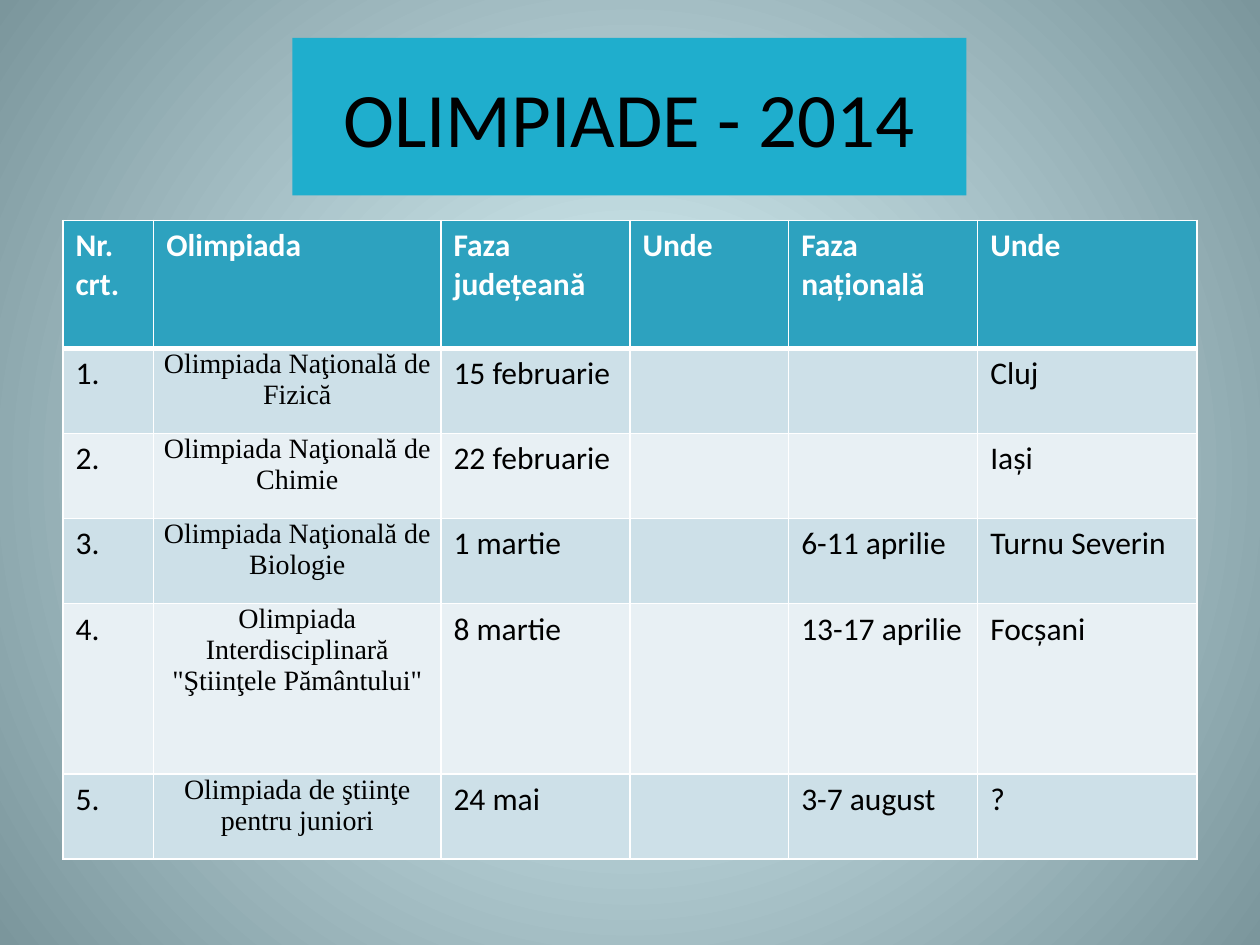
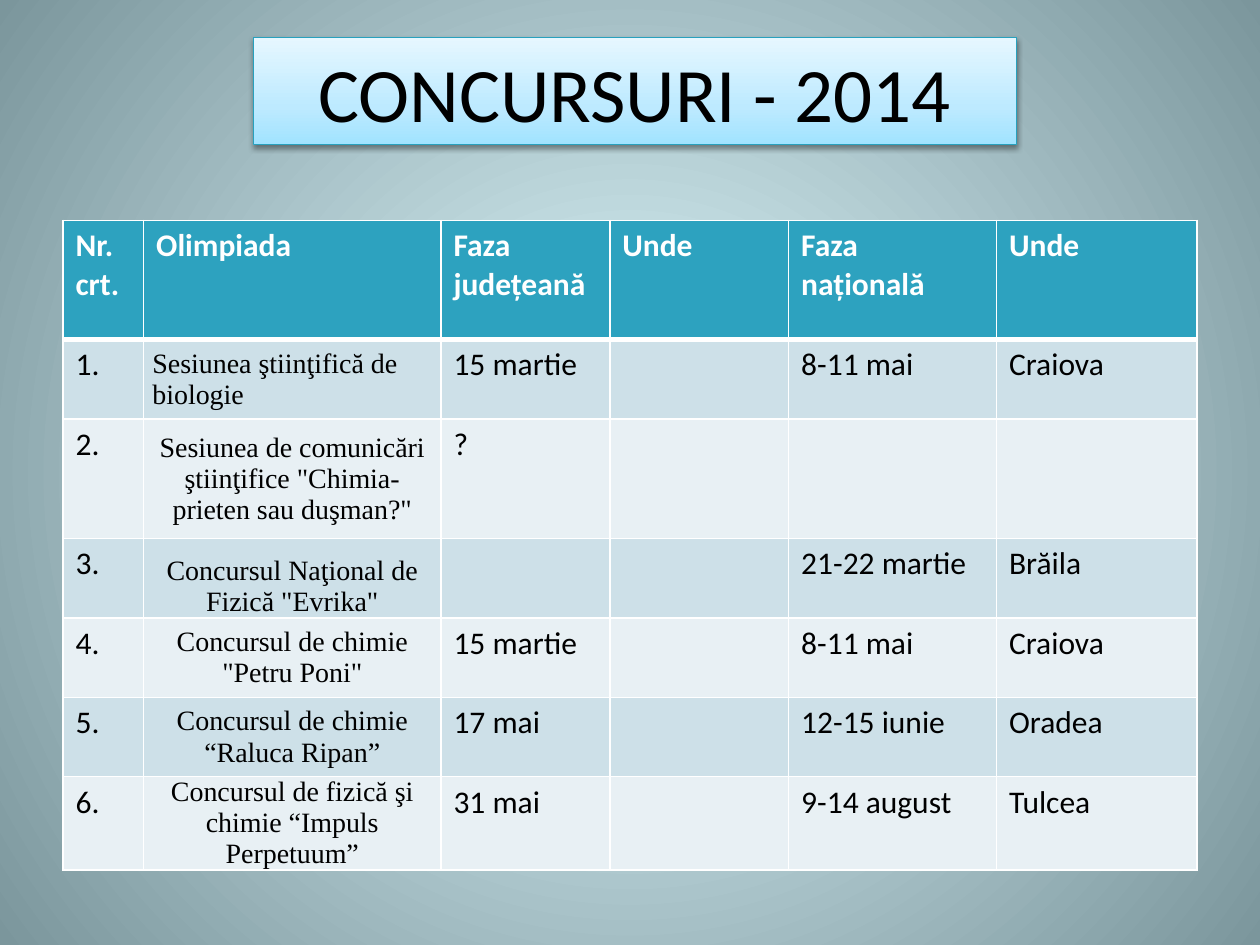
from lxml.etree import SubElement
from pptx import Presentation
from pptx.dml.color import RGBColor
from pptx.enum.shapes import MSO_SHAPE
from pptx.enum.text import MSO_ANCHOR, PP_ALIGN
from pptx.oxml.ns import qn
from pptx.util import Emu, Inches, Pt

W, H = Inches(10), Inches(7.5)
BLACK, WHITE = "000000", "FFFFFF"
HEADER_FILL, BANDS = "2DA2BF", ("CDE0E8", "E8F0F4")
BACKDROP = ((0, "E1FAFF"), (100, "7B969C"))
SANS, SERIF = "Calibri", "Times New Roman"
TABLE_LEFT, TABLE_TOP, TABLE_WIDTH = 0.05, 0.2333, 0.9
HEADINGS = ("Nr. crt.", "Olimpiada", "Faza județeană", "Unde", "Faza națională", "Unde")
NAME_COLUMN = 1
LEFT, CENTER = PP_ALIGN.LEFT, PP_ALIGN.CENTER
TOP, MIDDLE, BOTTOM = MSO_ANCHOR.TOP, MSO_ANCHOR.MIDDLE, MSO_ANCHOR.BOTTOM

# Each row: name, county date, national date, national place
OLYMPIADS = (
    ("Olimpiada Naţională de Fizică", "15 februarie", "", "Cluj"),
    ("Olimpiada Naţională de Chimie", "22 februarie", "", "Iași"),
    ("Olimpiada Naţională de Biologie", "1 martie", "6-11 aprilie", "Turnu Severin"),
    ('Olimpiada Interdisciplinară "Ştiinţele Pământului"', "8 martie", "13-17 aprilie", "Focșani"),
    ("Olimpiada de ştiinţe pentru juniori", "24 mai", "3-7 august", "?"),
)
CONTESTS = (
    ("Sesiunea ştiinţifică de biologie", "15 martie", "8-11 mai", "Craiova"),
    ('Sesiunea de comunicări ştiinţifice "Chimia-prieten sau duşman?"', "?", "", ""),
    ('Concursul Naţional de Fizică "Evrika"', "", "21-22 martie", "Brăila"),
    ('Concursul de chimie "Petru Poni"', "15 martie", "8-11 mai", "Craiova"),
    ("Concursul de chimie “Raluca Ripan”", "17 mai", "12-15 iunie", "Oradea"),
    ("Concursul de fizică şi chimie “Impuls Perpetuum”", "31 mai", "9-14 august", "Tulcea"),
)


def rgb(color):
    return RGBColor.from_string(color)


def write(tf, text, font=SANS, size=18, color=BLACK, bold=False, align=LEFT):
    tf.word_wrap = True
    p = tf.paragraphs[0]
    p.alignment = align
    r = p.add_run()
    r.text = text
    r.font.name, r.font.size, r.font.bold = font, Pt(size), bold
    r.font.color.rgb = rgb(color)


def add_color(parent, color):
    return SubElement(parent, qn("a:srgbClr"), val=color)


def set_gradient(fill, element, stops, angle=None):
    """Linear when an angle is given, otherwise circular from the centre."""
    fill.gradient()
    grad = next(element.iter(qn("a:gradFill")))
    for child in list(grad):
        grad.remove(child)
    stop_list = SubElement(grad, qn("a:gsLst"))
    for position, color in stops:
        add_color(SubElement(stop_list, qn("a:gs"), pos=str(position * 1000)), color)
    if angle is None:
        circle = SubElement(grad, qn("a:path"), path="circle")
        SubElement(circle, qn("a:fillToRect"), l="50000", t="50000", r="50000", b="50000")
    else:
        SubElement(grad, qn("a:lin"), ang=str(angle * 60000), scaled="1")


def set_borders(cell, top=1, bottom=1):
    tcPr = cell._tc.get_or_add_tcPr()
    for side, width in (("L", 1), ("R", 1), ("T", top), ("B", bottom)):
        ln = SubElement(tcPr, qn(f"a:ln{side}"), w=str(Pt(width)))
        add_color(SubElement(ln, qn("a:solidFill")), WHITE)


def add_slide(prs):
    s = prs.slides.add_slide(prs.slide_layouts[6])
    set_gradient(s.background.fill, s._element, BACKDROP)
    return s


def add_title(s, text, left, width, height):
    sp = s.shapes.add_shape(MSO_SHAPE.RECTANGLE, Emu(int(W * left)), Emu(int(H * 0.04)),
                            Emu(int(W * width)), Emu(int(H * height)))
    sp.shadow.inherit = False
    sp.line.fill.background()
    sp.text_frame.vertical_anchor = MIDDLE
    write(sp.text_frame, text, size=44, align=CENTER)
    return sp


def make_glossy(sp):
    """Pale blue gradient, thin outline and a soft shadow below."""
    set_gradient(sp.fill, sp._element, ((0, "A1E3FF"), (35, "BDEAFF"), (100, "E6F7FF")), angle=270)
    sp.line.color.rgb = rgb("28A1BE")
    sp.line.width = Pt(0.75)
    effects = sp._element.spPr.find(qn("a:effectLst"))
    shadow = SubElement(effects, qn("a:outerShdw"), blurRad=str(Pt(3.1)), dist=str(Pt(1.6)),
                        dir=str(90 * 60000), rotWithShape="0")
    SubElement(add_color(shadow, BLACK), qn("a:alpha"), val="38000")


def fill_cell(cell, text, row, column, name_align, name_anchor):
    header = row == 0
    set_borders(cell, top=3 if row == 1 else 1, bottom=3 if header else 1)
    cell.fill.solid()
    cell.fill.fore_color.rgb = rgb(HEADER_FILL if header else BANDS[(row - 1) % 2])
    style = {}
    if header:
        style = dict(color=WHITE, bold=True)
    elif column == NAME_COLUMN:
        style = dict(font=SERIF, size=16, align=name_align)
        cell.margin_left = cell.margin_right = Inches(0.07)
        cell.margin_top = cell.margin_bottom = 0
        cell.vertical_anchor = name_anchor
    if text:
        write(cell.text_frame, text, **style)


def add_schedule(s, entries, columns, rows, height, aligns=None, anchors=None):
    """columns and rows are relative weights; aligns and anchors style names by row."""
    aligns, anchors = aligns or {}, anchors or {}
    width, height = W * TABLE_WIDTH, H * height
    table = s.shapes.add_table(len(rows), len(columns), Emu(int(W * TABLE_LEFT)),
                               Emu(int(H * TABLE_TOP)), Emu(int(width)), Emu(int(height))).table
    for column, weight in zip(table.columns, columns):
        column.width = Emu(int(width * weight / sum(columns)))
    for row, weight in zip(table.rows, rows):
        row.height = Emu(int(height * weight / sum(rows)))
    lines = [HEADINGS]
    for number, (name, county, national, place) in enumerate(entries, 1):
        lines.append((f"{number}.", name, county, "", national, place))
    for i, line in enumerate(lines):
        for j, text in enumerate(line):
            fill_cell(table.cell(i, j), text, i, j, aligns.get(i, CENTER), anchors.get(i, TOP))


def olympiads_slide(prs):
    s = add_slide(prs)
    sp = add_title(s, "OLIMPIADE - 2014", left=0.232, width=0.535, height=0.1667)
    sp.fill.solid()
    sp.fill.fore_color.rgb = rgb("1FAECD")
    add_schedule(s, OLYMPIADS, columns=(0.72, 2.28, 1.5, 1.26, 1.5, 1.74),
                 rows=(1.5, 1, 1, 1, 2, 1), height=0.676)


def contests_slide(prs):
    s = add_slide(prs)
    make_glossy(add_title(s, "CONCURSURI - 2014", left=0.201, width=0.606, height=0.1133))
    anchors = {row: MIDDLE for row in range(1, len(CONTESTS) + 1)}
    anchors[3] = BOTTOM
    add_schedule(s, CONTESTS, columns=(0.64, 2.36, 1.34, 1.42, 1.65, 1.59),
                 rows=(1.5, 1, 1.5, 1, 1, 1, 1), height=0.673,
                 aligns={1: LEFT}, anchors=anchors)


def main():
    prs = Presentation()
    prs.slide_width, prs.slide_height = W, H
    olympiads_slide(prs)
    contests_slide(prs)
    prs.save("out.pptx")


if __name__ == "__main__":
    main()
